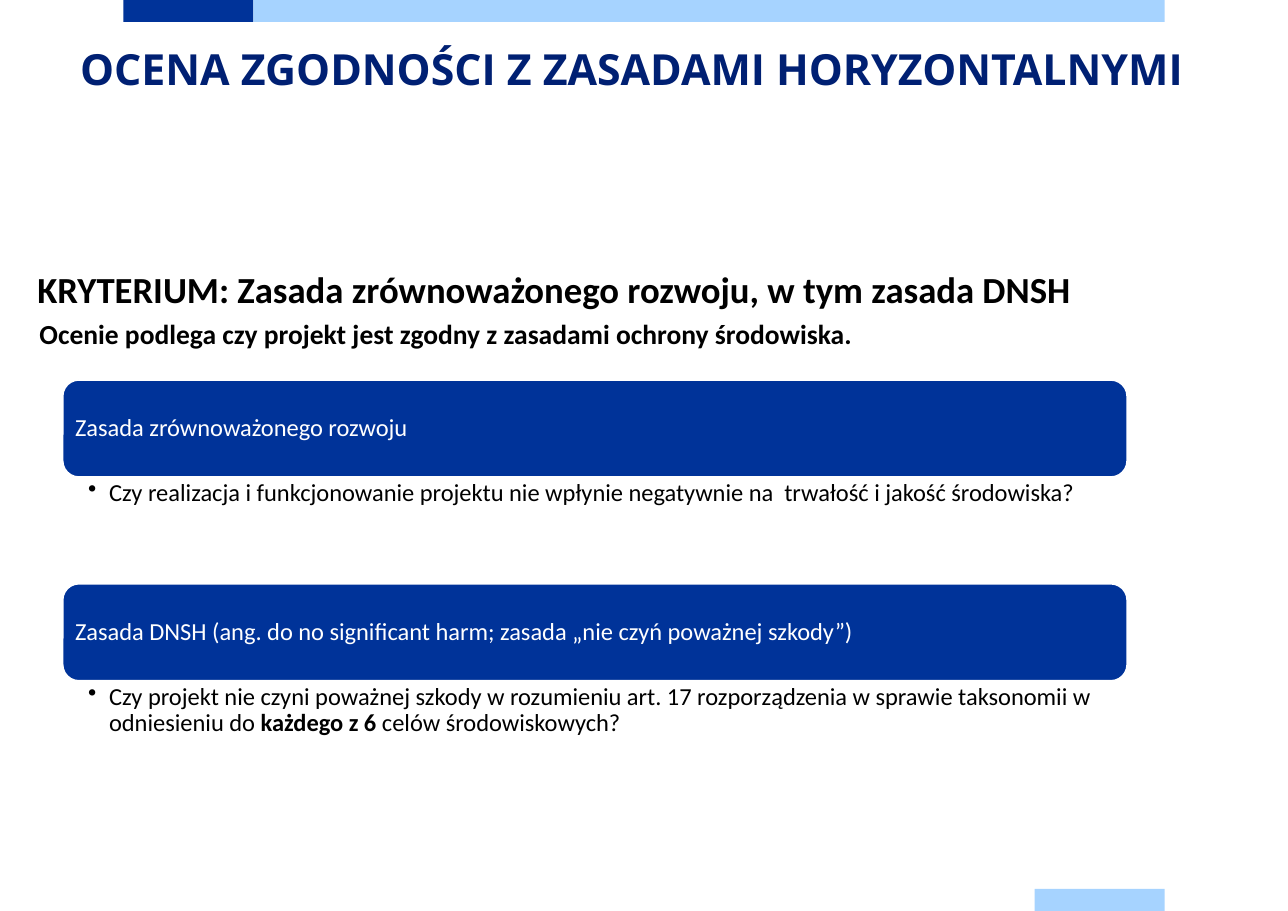
"""Build the slide on horizontal principles: sustainable development and DNSH."""
from pptx import Presentation
from pptx import util as u
from pptx.dml.color import RGBColor
from pptx.enum import shapes, text
from pptx.oxml import parse_xml
from pptx.oxml.ns import nsdecls

NAVY, SKY = "003399", "A6D3FF"


def paint(target, color):
    target.rgb = RGBColor.from_string(color)


def write(shape, words, size=16, font="Calibri", color="000000", bold=False,
          align=text.PP_ALIGN.LEFT, anchor=text.MSO_ANCHOR.TOP,
          space=1.0, inset=(0, 0, 0, 0), bullet=False):
    frame = shape.text_frame
    frame.word_wrap = True
    frame.vertical_anchor = anchor
    frame.margin_left, frame.margin_top, frame.margin_right, frame.margin_bottom = map(u.Inches, inset)
    para = frame.paragraphs[0]
    para.alignment, para.line_spacing = align, space
    if bullet:
        props = para._p.get_or_add_pPr()
        props.set("marL", str(u.Inches(0.19)))
        props.set("indent", str(u.Inches(-0.19)))
        props.append(parse_xml(f'<a:buChar {nsdecls("a")} char="•"/>'))
    for index, part in enumerate(words):
        run = para.add_run()
        run.text = part
        run.font.name, run.font.size = font, u.Pt(size)
        run.font.bold = bold or index % 2 == 1
        paint(run.font.color, color)


deck = Presentation()
deck.slide_width, deck.slide_height = u.Inches(11.69), u.Inches(8.27)
slide = deck.slides.add_slide(deck.slide_layouts[6])
tree = slide.shapes

for left, top, width, color in [(1.12, 0, 1.18, NAVY), (2.3, 0, 8.27, SKY), (9.39, 8.07, 1.18, SKY)]:
    bar = tree.add_shape(shapes.MSO_SHAPE.RECTANGLE, *map(u.Inches, (left, top, width, 0.2)))
    bar.shadow.inherit = False
    bar.fill.solid()
    paint(bar.fill.fore_color, color)
    bar.line.fill.background()

title = tree.add_textbox(*map(u.Inches, (0.01, 0.35, 11.44, 0.63)))
write(title, ["OCENA ZGODNOŚCI Z ZASADAMI HORYZONTALNYMI"], size=28, font="Open Sans",
      color="002073", bold=True, align=text.PP_ALIGN.CENTER, space=u.Pt(36))

head = tree.add_textbox(*map(u.Inches, (0.34, 2.49, 9.84, 0.4)))
write(head, ["KRYTERIUM: Zasada zrównoważonego rozwoju, w tym zasada DNSH"],
      size=24, bold=True, space=u.Pt(24))

lead = tree.add_textbox(*map(u.Inches, (0.26, 2.83, 9.01, 0.71)))
write(lead, ["Ocenie podlega czy projekt jest zgodny z zasadami ochrony środowiska."],
      size=18, bold=True, inset=(0.1, 0.05, 0.1, 0.05))

rules = [
    ("Zasada zrównoważonego rozwoju",
     ["Czy realizacja i funkcjonowanie projektu nie wpłynie negatywnie na  trwałość i jakość środowiska?"]),
    ("Zasada DNSH (ang. do no significant harm; zasada „nie czyń poważnej szkody”)",
     ["Czy projekt nie czyni poważnej szkody w rozumieniu art. 17 rozporządzenia "
      "w sprawie taksonomii w odniesieniu do ", "każdego z 6 ", "celów środowiskowych?"]),
]
for row, (name, query) in enumerate(rules):
    top = 3.45 + 1.85 * row
    card = tree.add_shape(shapes.MSO_SHAPE.ROUNDED_RECTANGLE, *map(u.Inches, (0.57, top, 9.66, 0.88)))
    card.shadow.inherit = False
    card.fill.solid()
    paint(card.fill.fore_color, NAVY)
    paint(card.line.color, "FFFFFF")
    card.line.width = u.Pt(1)
    write(card, [name], color="FFFFFF", anchor=text.MSO_ANCHOR.MIDDLE,
          space=0.9, inset=(0.07, 0.07, 0.07, 0.07))
    note = tree.add_textbox(*map(u.Inches, (0.49, top + 0.89, 9.81, 0.96)))
    write(note, query, space=0.9, inset=(0.31, 0.02, 0.12, 0.02), bullet=True)

deck.save("out.pptx")
